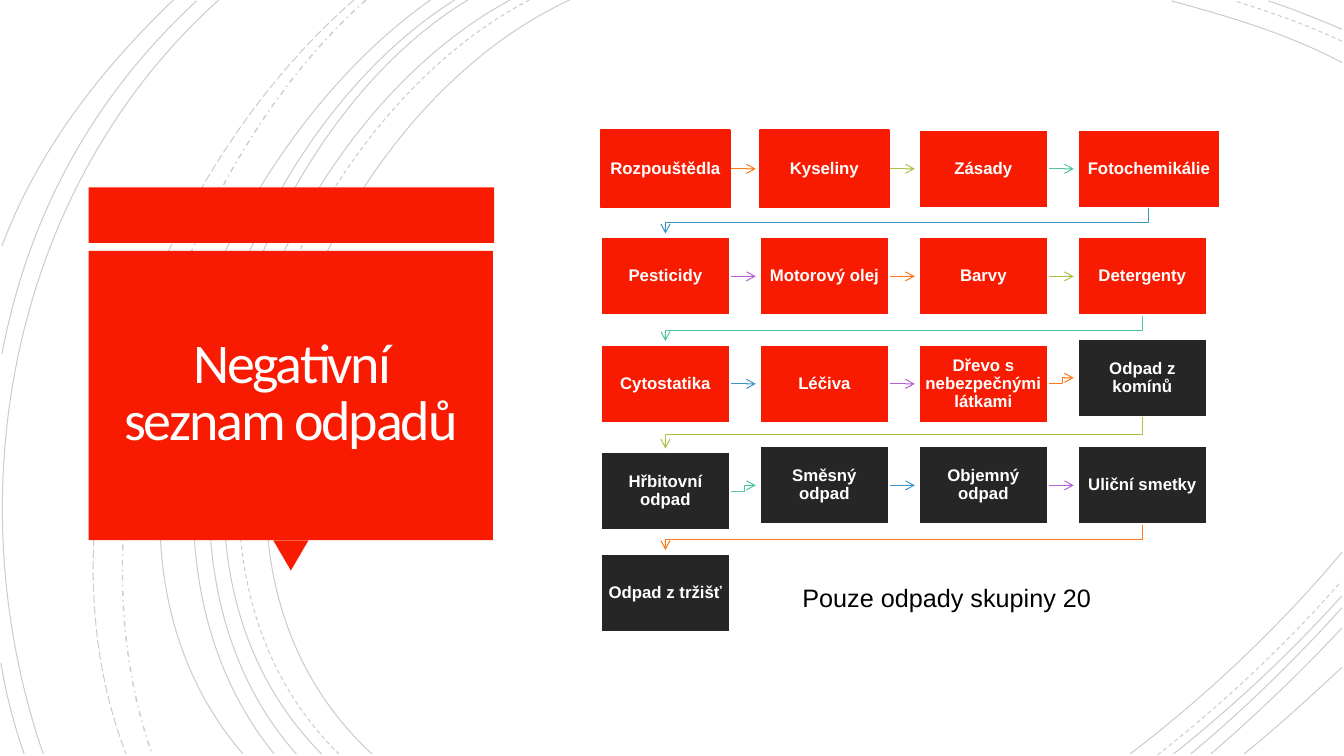
from lxml.etree import SubElement
from pptx import Presentation
from pptx.dml.color import RGBColor
from pptx.enum.dml import MSO_LINE
from pptx.enum.shapes import MSO_CONNECTOR, MSO_SHAPE
from pptx.enum.text import MSO_ANCHOR, MSO_AUTO_SIZE, PP_ALIGN
from pptx.oxml.ns import qn
from pptx.util import Inches, Pt

RED, DARK, WHITE, BLACK = "F81B02", "262626", "FFFFFF", "000000"
ARROW_COLOURS = ["FC7715", "AFBF41", "50C49F", "3B95C4", "B560D4"]
COLUMNS, GRID_LEFT, GRID_TOP = 4, 5.96, 1.29
COLUMN_STEP, ROW_STEP = 4.73 / 3, 3.2 / 3
BOX_WIDTH, WIDE_BOX_WIDTH, BOX_HEIGHT = 1.28, 1.41, 0.77
ARROW_GAP, RAISE = 0.04, 0.06

WASTES = [
    "Rozpouštědla", "Kyseliny", "Zásady", "Fotochemikálie",
    "Pesticidy", "Motorový olej", "Barvy", "Detergenty",
    "Cytostatika", "Léčiva", "Dřevo s nebezpečnými látkami", "Odpad z komínů",
    "Hřbitovní odpad", "Směsný odpad", "Objemný odpad", "Uliční smetky",
    "Odpad z tržišť",
]
FIRST_DARK = WASTES.index("Odpad z komínů")
RAISED = {"Odpad z komínů", "Směsný odpad", "Objemný odpad", "Uliční smetky", "Odpad z tržišť"}

SOLID_ARCS = [
    [(5.65, 0), (3.15, 1.15), (1.43, 5.4), (3.69, 7.48)],
    [(13.31, 0.62), (12.78, 0.34), (12.18, 0.16), (11.62, 0.01)],
    [(11.21, 7.48), (11.97, 6.9), (12.69, 6.22), (13.31, 5.48)],
    [(5.06, 0), (2.7, 1.27), (1.1, 5.37), (3.19, 7.48)],
    [(13.31, 0.29), (13.07, 0.19), (12.83, 0.09), (12.58, 0.01)],
    [(11.64, 7.48), (12.23, 7.01), (12.8, 6.48), (13.31, 5.91)],
    [(4.64, 0), (2.44, 1.33), (1.1, 5.41), (2.94, 7.48)],
    [(11.81, 7.48), (12.34, 7.04), (12.84, 6.55), (13.31, 6.03)],
    [(4.51, 0), (2.31, 1.38), (0.97, 5.33), (2.72, 7.48)],
    [(12.01, 7.48), (12.46, 7.09), (12.9, 6.67), (13.31, 6.23)],
    [(4.27, 0), (2.17, 1.47), (0.53, 5.29), (2.41, 7.48)],
    [(12.34, 7.48), (12.67, 7.21), (12.99, 6.92), (13.31, 6.62)],
    [(2.17, 0), (0.11, 1.85), (-0.46, 4.9), (0.43, 7.48)],
    [(1.95, 0.01), (0.92, 0.96), (0.28, 2.14), (0.02, 3.51)],
    [(0.01, 6.58), (0.06, 6.89), (0.14, 7.19), (0.24, 7.48)],
    [(1.72, 0), (1, 0.69), (0.37, 1.5), (0.02, 2.44)],
]
DASHED_ARCS = [
    [(5.25, 0), (2.85, 1.25), (1.23, 5.37), (3.36, 7.48)],
    [(13.31, 0.41), (12.97, 0.25), (12.6, 0.12), (12.25, 0.01)],
    [(11.48, 7.49), (12.13, 6.98), (12.75, 6.4), (13.3, 5.77)],
]
DASH_DOT_ARCS = [[(3.63, 0), (1.76, 1.66), (0.65, 5.09), (1.51, 7.48)]]
LONG_DASH_ARCS = [[(3.51, 0), (1.57, 1.69), (0.29, 4.99), (1.25, 7.48)]]


def colour(hex_string):
    return RGBColor.from_string(hex_string)


def style_line(line, hex_string, width):
    line.color.rgb = colour(hex_string)
    line.width = Pt(width)


def add_polyline(slide, points):
    start, *others = [(Inches(x), Inches(y)) for x, y in points]
    builder = slide.shapes.build_freeform(*start)
    builder.add_line_segments(others, close=False)
    shape = builder.convert_to_shape()
    shape.fill.background()
    shape.shadow.inherit = False
    return shape


def add_curve(slide, controls):
    shape = add_polyline(slide, controls)
    outline = next(shape._element.iter(qn("a:path")))
    segments = outline.findall(qn("a:lnTo"))
    curve = SubElement(outline, qn("a:cubicBezTo"))
    for segment in segments:
        curve.append(segment[0])
        outline.remove(segment)
    return shape


def add_arcs(slide, arcs, dash, width=0.75):
    for controls in arcs:
        shape = add_curve(slide, controls)
        style_line(shape.line, BLACK, width)
        shape.line.dash_style = dash
        tint = shape.line.fill._xPr.find(qn("a:solidFill"))[0]
        SubElement(tint, qn("a:alpha"), val="20000")


def add_block(slide, preset, left, top, width, height, fill):
    shape = slide.shapes.add_shape(preset, *map(Inches, (left, top, width, height)))
    shape.fill.solid()
    shape.fill.fore_color.rgb = colour(fill)
    shape.line.fill.background()
    shape.shadow.inherit = False
    return shape


def write_text(shape, text, size, font_name, hex_string, insets, bold=False, alignment=PP_ALIGN.CENTER,
               anchor=MSO_ANCHOR.MIDDLE, line_spacing=None):
    frame = shape.text_frame
    frame.word_wrap = True
    frame.auto_size = MSO_AUTO_SIZE.NONE
    frame.vertical_anchor = anchor
    frame.margin_left = frame.margin_right = Inches(insets[0])
    frame.margin_top = frame.margin_bottom = Inches(insets[1])
    frame.text = text
    paragraph = frame.paragraphs[0]
    paragraph.alignment = alignment
    paragraph.line_spacing = line_spacing
    font = paragraph.font
    font.size, font.name, font.bold = Pt(size), font_name, bold
    font.color.rgb = colour(hex_string)
    return paragraph


def box_bounds(index):
    row, column = divmod(index, COLUMNS)
    top = GRID_TOP + row * ROW_STEP - (RAISE if WASTES[index] in RAISED else 0)
    width = WIDE_BOX_WIDTH if WASTES[index] == "Fotochemikálie" else BOX_WIDTH
    return GRID_LEFT + column * COLUMN_STEP, top, width, BOX_HEIGHT


def add_waste_box(slide, index):
    fill = DARK if index >= FIRST_DARK else RED
    box = add_block(slide, MSO_SHAPE.RECTANGLE, *box_bounds(index), fill)
    style_line(box.line, RED if index < 2 else WHITE, 1.25)
    write_text(box, WASTES[index], 12, "Arial", WHITE, (0.06, 0.07), bold=True, line_spacing=0.9)


def arrow_route(index):
    left, top, width, height = box_bounds(index)
    next_left, next_top, next_width, next_height = box_bounds(index + 1)
    if next_left < left:
        start_x, end_x = left + width / 2, next_left + next_width / 2
        bend = (top + height + next_top) / 2
        return [(start_x, top + height), (start_x, bend), (end_x, bend), (end_x, next_top - ARROW_GAP)]
    start = (left + BOX_WIDTH, top + height / 2)
    end = (next_left - ARROW_GAP, next_top + next_height / 2)
    if abs(start[1] - end[1]) < 0.01:
        return [start, end]
    bend = (left + BOX_WIDTH + next_left) / 2
    return [start, (bend, start[1]), (bend, end[1]), end]


def add_arrow(slide, index):
    route = arrow_route(index)
    if len(route) == 2:
        ends = [Inches(value) for point in route for value in point]
        arrow = slide.shapes.add_connector(MSO_CONNECTOR.STRAIGHT, *ends)
        SubElement(arrow._element.spPr, qn("a:effectLst"))
    else:
        arrow = add_polyline(slide, route)
    style_line(arrow.line, ARROW_COLOURS[index % len(ARROW_COLOURS)], 0.75)
    SubElement(arrow.line.fill._xPr, qn("a:tailEnd"), type="arrow")


def add_title(slide):
    add_block(slide, MSO_SHAPE.RECTANGLE, 0.88, 1.86, 4.02, 0.55, RED)
    pointer = add_block(slide, MSO_SHAPE.ISOSCELES_TRIANGLE, 2.71, 5.36, 0.35, 0.3, RED)
    pointer.rotation = 180
    add_block(slide, MSO_SHAPE.RECTANGLE, 0.88, 2.49, 4.01, 2.87, RED)
    title = slide.shapes.title
    title.left, title.top, title.width, title.height = map(Inches, (0.97, 2.57, 3.83, 2.69))
    paragraph = write_text(title, "Negativní seznam odpadů", 40, "Calibri", "FFFEFF", (0.25, 0.25),
                           line_spacing=0.85)
    paragraph.runs[0].font._element.set("spc", "-150")
    tree = slide.shapes._spTree
    tree.remove(title._element)
    tree.append(title._element)


def main():
    presentation = Presentation()
    presentation.slide_width, presentation.slide_height = Inches(13.33), Inches(7.5)
    slide = presentation.slides.add_slide(presentation.slide_layouts[5])
    add_arcs(slide, SOLID_ARCS, MSO_LINE.SOLID)
    add_arcs(slide, DASHED_ARCS, MSO_LINE.DASH)
    add_arcs(slide, DASH_DOT_ARCS, MSO_LINE.DASH_DOT, width=1)
    add_arcs(slide, LONG_DASH_ARCS, MSO_LINE.LONG_DASH)
    add_title(slide)
    for index in range(len(WASTES)):
        if index + 1 < len(WASTES):
            add_arrow(slide, index)
        add_waste_box(slide, index)
    caption = slide.shapes.add_textbox(*map(Inches, (7.86, 5.73, 4.25, 0.4)))
    write_text(caption, "Pouze odpady skupiny 20", 18, "Arial", BLACK, (0.1, 0.05),
               alignment=PP_ALIGN.LEFT, anchor=MSO_ANCHOR.TOP)
    presentation.save("out.pptx")


if __name__ == "__main__":
    main()
